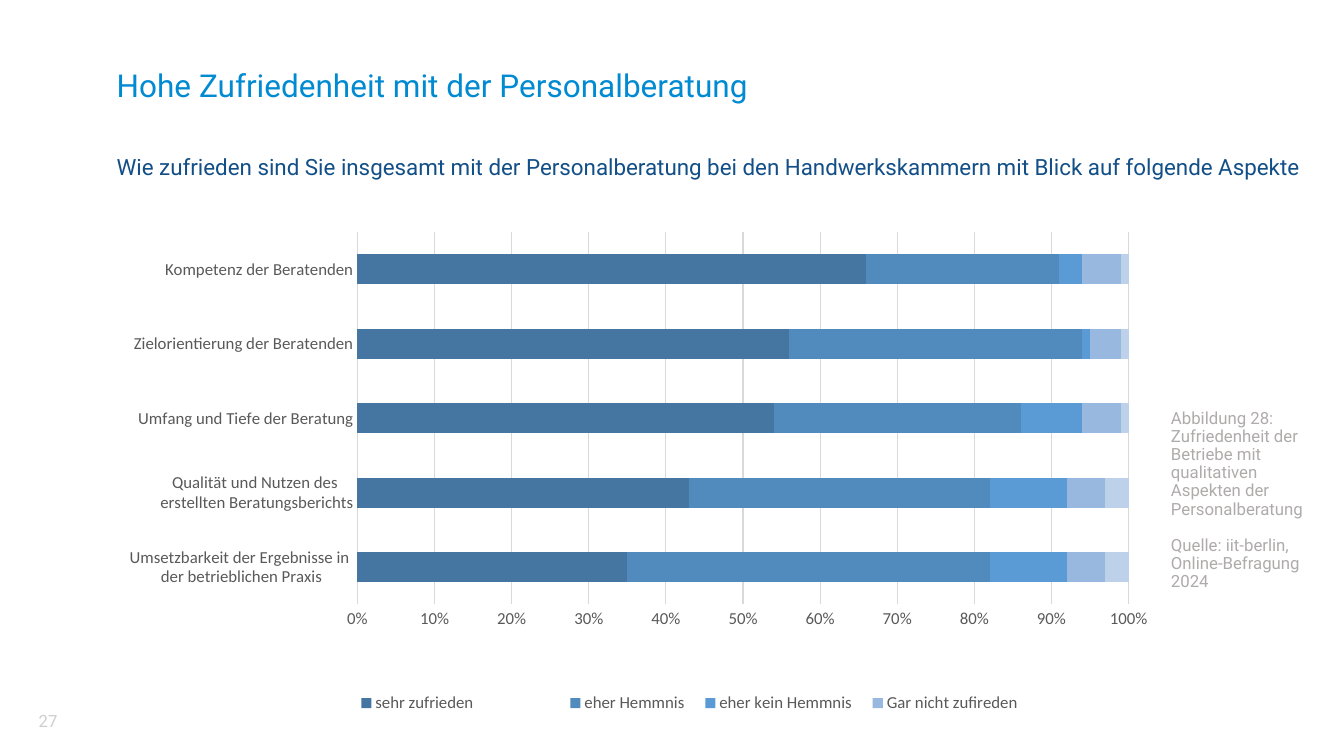
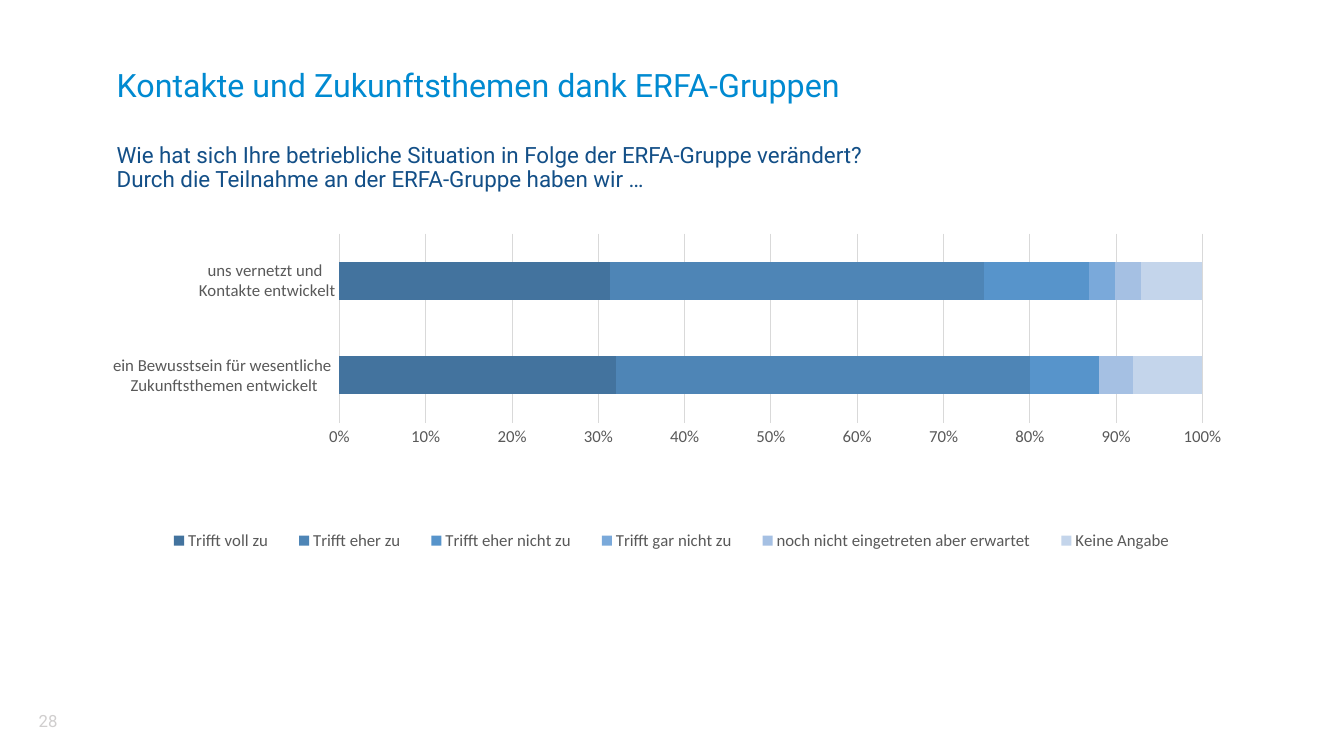
from lxml import etree
from pptx import Presentation
from pptx.chart.data import CategoryChartData
from pptx.dml.color import RGBColor
from pptx.enum.chart import XL_CHART_TYPE, XL_LEGEND_POSITION, XL_TICK_MARK
from pptx.enum.text import MSO_ANCHOR, MSO_AUTO_SIZE, PP_ALIGN
from pptx.oxml.ns import qn
from pptx.util import Cm, Pt

BARS = XL_CHART_TYPE.BAR_STACKED_100
BOTTOM = XL_LEGEND_POSITION.BOTTOM
NO_TICK = XL_TICK_MARK.NONE
MIDDLE = MSO_ANCHOR.MIDDLE
NO_FIT = MSO_AUTO_SIZE.NONE
LEFT, CENTER = PP_ALIGN.LEFT, PP_ALIGN.CENTER

WHITE = RGBColor(0xFF, 0xFF, 0xFF)
SKY = RGBColor(0x00, 0x8A, 0xD1)
NAVY = RGBColor(0x13, 0x4F, 0x87)
SILVER = RGBColor(0xD0, 0xCE, 0xCE)
GRAY = RGBColor(0xAF, 0xAB, 0xAB)
DARK = RGBColor(0x59, 0x59, 0x59)
RULE = RGBColor(0xD9, 0xD9, 0xD9)
BLUES_5 = [RGBColor.from_string(c) for c in
           ("4576A2", "518ABD", "5B9BD5", "98B8E0", "BED1EA")]
BLUES_6 = [RGBColor.from_string(c) for c in
           ("43739E", "4E85B6", "5794CB", "7AA9DA", "A5C0E3", "C4D5EB")]

FONT, CHART_FONT = "Roboto", "Calibri"
TITLE_BOX = (2.64, 1.42, 19.96, 1.57)
LEAD_BOX = (2.64, 3.45, 30.61, 1.57)
PAGE_BOX = (0.43, 17.65, 1.57, 1.02)


def place(shape, box):
    """Move and size a shape to a box in centimetres."""
    shape.left, shape.top, shape.width, shape.height = map(Cm, box)


def write(shape, paras, size, color, align=LEFT, pad=(0.3, 0.61), lead=0.9, gap=0):
    """Fill a shape with paragraphs, each a list of lines."""
    frame = shape.text_frame
    frame.word_wrap = True
    frame.auto_size = NO_FIT
    frame.vertical_anchor = MIDDLE
    frame.margin_left = frame.margin_right = Cm(pad[0])
    frame.margin_top = frame.margin_bottom = Cm(pad[1])
    for i, lines in enumerate(paras):
        para = frame.add_paragraph() if i else frame.paragraphs[0]
        para.alignment = align
        para.line_spacing = lead
        para.space_before = Pt(gap if i else 0)
        for j, line in enumerate(lines):
            if j:
                para.add_line_break()
            run = para.add_run()
            run.text = line
            run.font.name = FONT
            run.font.size = Pt(size)
            run.font.color.rgb = color


def add_text(slide, box, paras, size, color, **style):
    """Add a text box to a slide."""
    shape = slide.shapes.add_textbox(*map(Cm, box))
    write(shape, paras, size, color, **style)


def add_page(deck, title, size, lead, number):
    """Add a slide with title, lead question and page number."""
    slide = deck.slides.add_slide(deck.slide_layouts[5])
    slide.background.fill.solid()
    slide.background.fill.fore_color.rgb = WHITE
    place(slide.shapes.title, TITLE_BOX)
    write(slide.shapes.title, [[title]], size, SKY)
    add_text(slide, LEAD_BOX, [lead], 16, NAVY)
    add_text(slide, PAGE_BOX, [[number]], 12, SILVER,
             align=CENTER, pad=(0.25, 0.13), lead=1)
    return slide


def set_layout(node, index, area, inner=False):
    """Fix the place of a chart part as shares of the chart."""
    for old in node.findall(qn("c:layout")):
        node.remove(old)
    layout = etree.Element(qn("c:layout"))
    manual = etree.SubElement(layout, qn("c:manualLayout"))
    pairs = [("layoutTarget", "inner")] if inner else []
    pairs += [("xMode", "edge"), ("yMode", "edge")]
    pairs += [(key, str(val)) for key, val in zip("xywh", area)]
    for key, val in pairs:
        etree.SubElement(manual, qn("c:" + key)).set("val", val)
    node.insert(index, layout)


def set_font(font):
    """Give chart text its font, size and colour."""
    font.name = CHART_FONT
    font.size = Pt(12)
    font.color.rgb = DARK


def add_bars(slide, box, cats, series, colors, plot_area, key_area):
    """Add a stacked percent bar chart with a legend below."""
    data = CategoryChartData()
    data.categories = cats
    for name, vals in series:
        data.add_series(name, vals)
    chart = slide.shapes.add_chart(BARS, *map(Cm, box), data).chart
    set_font(chart.font)
    chart.has_title = False
    chart.has_legend = True
    key = chart.legend
    key.position = BOTTOM
    key.include_in_layout = False
    set_font(key.font)
    set_layout(key._element, 1, key_area)
    set_layout(chart._chartSpace.find(".//" + qn("c:plotArea")), 0,
               plot_area, inner=True)

    plot = chart.plots[0]
    plot.gap_width, plot.overlap = 150, 100
    plot.vary_by_categories = False
    for bar, color in zip(plot.series, colors):
        bar.format.fill.solid()
        bar.format.fill.fore_color.rgb = color

    for axis in (chart.category_axis, chart.value_axis):
        axis.major_tick_mark = axis.minor_tick_mark = NO_TICK
        set_font(axis.tick_labels.font)
    values = chart.value_axis
    values.tick_labels.number_format = "0%"
    values.tick_labels.number_format_is_linked = False
    values.format.line.fill.background()
    values.has_major_gridlines = True
    for line in (chart.category_axis.format.line,
                 values.major_gridlines.format.line):
        line.color.rgb = RULE
        line.width = Pt(0.75)


def add_advice(deck):
    """Build the slide on satisfaction with the advice."""
    slide = add_page(
        deck, "Hohe Zufriedenheit mit der Personalberatung", 22.5,
        ["Wie zufrieden sind Sie insgesamt mit der Personalberatung bei den "
         "Handwerkskammern mit Blick auf folgende Aspekte"], "27")
    cats = ["Umsetzbarkeit der Ergebnisse in \nder betrieblichen Praxis",
            "Qualität und Nutzen des \nerstellten Beratungsberichts",
            "Umfang und Tiefe der Beratung",
            "Zielorientierung der Beratenden",
            "Kompetenz der Beratenden"]
    series = [("sehr zufrieden", (35, 43, 54, 56, 66)),
              ("eher Hemmnis", (47, 39, 32, 38, 25)),
              ("eher kein Hemmnis", (10, 10, 8, 1, 3)),
              ("Gar nicht zufireden", (5, 5, 5, 4, 5)),
              ("Weiß nicht/Keine Angabe", (3, 3, 1, 1, 1))]
    add_bars(slide, (0.64, 4.24, 28.37, 15.06), cats, series, BLUES_5,
             (0.295, 0.107, 0.685, 0.623), (0.285, 0.87, 0.61, 0.05))
    add_text(slide, (29.21, 9.63, 4.37, 5.97),
             [["Abbildung 28: Zufriedenheit der Betriebe mit qualitativen "
               "Aspekten der Personalberatung"],
              ["Quelle: iit-berlin, Online-Befragung 2024"]],
             12, GRAY, gap=13)


def add_groups(deck):
    """Build the slide on the effect of the groups."""
    slide = add_page(
        deck, "Kontakte und Zukunftsthemen dank ERFA-Gruppen", 23,
        ["Wie hat sich Ihre betriebliche Situation in Folge der "
         "ERFA-Gruppe verändert?",
         "Durch die Teilnahme an der ERFA-Gruppe haben wir …"], "28")
    cats = ["ein Bewusstsein für wesentliche \nZukunftsthemen entwickelt",
            "uns vernetzt und \nKontakte entwickelt"]
    series = [("Trifft voll zu", (32, 31)),
              ("Trifft eher zu", (48, 43)),
              ("Trifft eher nicht zu", (8, 12)),
              ("Trifft gar nicht zu", (0, 3)),
              ("noch nicht eingetreten aber erwartet", (4, 3)),
              ("Keine Angabe", (8, 7))]
    add_bars(slide, (2.01, 5.49, 28.96, 12.14), cats, series, BLUES_6,
             (0.226, 0.033, 0.751, 0.392), (0.06, 0.64, 0.91, 0.06))


def main():
    """Build and save the deck."""
    deck = Presentation()
    deck.slide_width, deck.slide_height = Cm(33.87), Cm(19.05)
    add_advice(deck)
    add_groups(deck)
    deck.save("out.pptx")


if __name__ == "__main__":
    main()
